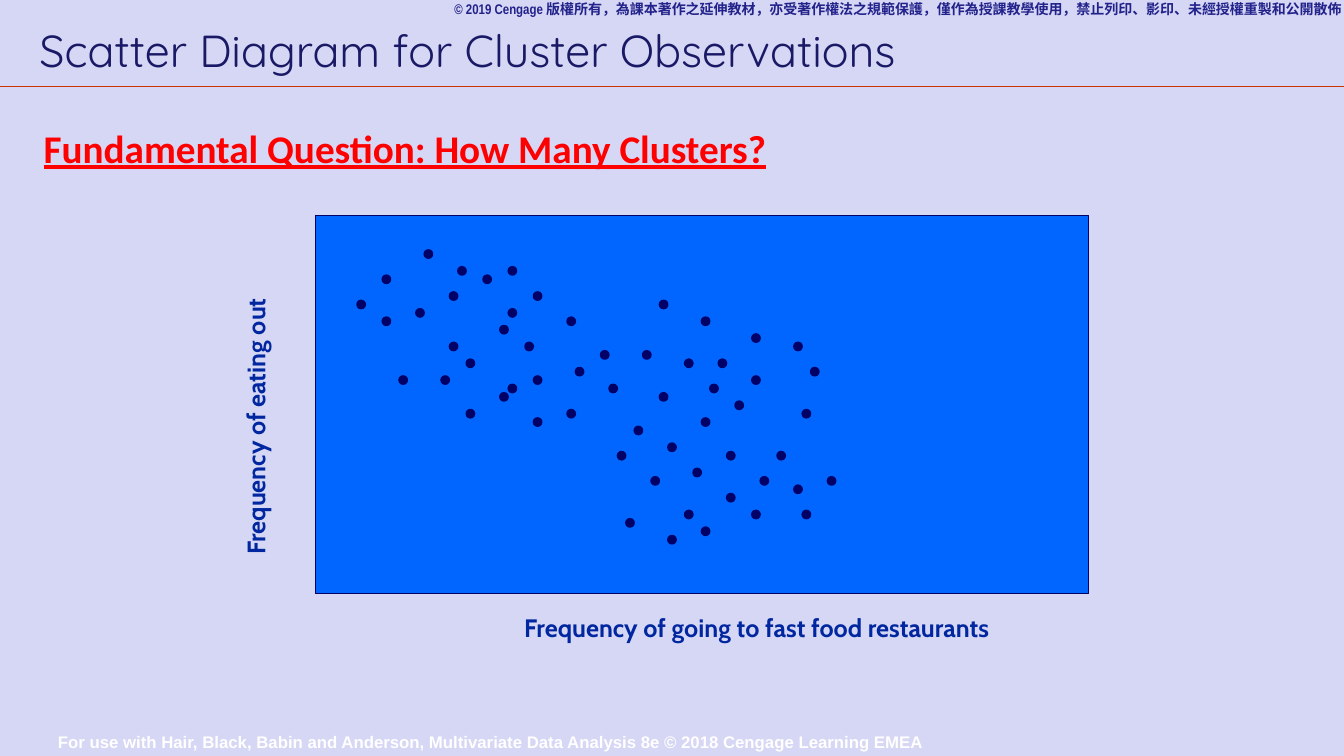
import pptx
import pptx.util
import pptx.dml.color
import pptx.enum.shapes
import pptx.enum.text
import lxml.etree

Pt = pptx.util.Pt
Kind = pptx.enum.shapes.MSO_SHAPE
Side = pptx.enum.text.PP_ALIGN
Mid = pptx.enum.text.MSO_ANCHOR.MIDDLE
Top = pptx.enum.text.MSO_ANCHOR.TOP
Fit = pptx.enum.text.MSO_AUTO_SIZE

TITLE = "Scatter Diagram for Cluster Observations"
ASK = "Fundamental Question: How Many Clusters?"
RIGHTS = "© 2019 Cengage版權所有，為課本著作之延伸教材，亦受著作權法之規範保護，僅作為授課教學使用，禁止列印、影印、未經授權重製和公開散佈"
FOOT = "For use with Hair, Black, Babin and Anderson, Multivariate Data Analysis 8e © 2018 Cengage Learning EMEA"
DOWN = "Frequency of eating out"
ACROSS = "Frequency of going to fast food restaurants"

DOTS = [
    (8, 0), (3, 3), (3, 8), (5, 15), (36, 6), (12, 2), (15, 3), (18, 7),
    (32, 32), (10, 15), (30, 16), (34, 12), (33, 21), (35, 27), (39, 31),
    (43, 13), (37, 34), (41, 33), (47, 31), (48, 27), (50, 24), (52, 11),
    (53, 19), (52, 28), (53, 31), (56, 27), (39, 13), (37, 23), (36, 17),
    (44, 29), (42, 16), (41, 20), (44, 24), (45, 18), (47, 15), (54, 14),
    (40, 26), (13, 19), (0, 6), (7, 7), (11, 5), (47, 10), (17, 9),
    (18, 16), (21, 15), (25, 19), (20, 11), (26, 14), (25, 8), (18, 2),
    (11, 11), (13, 13), (21, 20), (17, 17), (41, 8), (29, 12), (21, 5),
    (31, 24),
]
STEP = 6
LEFT, HEAD = 255, 178.5
INK = "000066"

LOOKS = {
    "title": {"size": Pt(32), "name": "Quicksand", "bold": False},
    "ask": {"size": Pt(28), "name": "Calibri", "bold": True, "underline": True},
    "rights": {"size": Pt(10), "name": "Arial Narrow", "bold": True},
    "label": {"size": Pt(18), "name": "Cabin", "bold": True},
    "foot": {"size": Pt(12), "name": "Arial", "bold": True},
}


def tint(code):
    return pptx.dml.color.RGBColor.from_string(code)


def place(shape, box):
    for name, value in zip(("left", "top", "width", "height"), box):
        setattr(shape, name, Pt(value))


def write(shape, text, look, code, align=Side.LEFT, anchor=Top, fit=Fit.NONE):
    frame = shape.text_frame
    frame.text = text
    frame.word_wrap = True
    frame.auto_size = fit
    frame.vertical_anchor = anchor
    para = frame.paragraphs[0]
    para.alignment = align
    para.space_before = Pt(0)
    font = para.runs[0].font
    for name, value in LOOKS[look].items():
        setattr(font, name, value)
    font.color.rgb = tint(code)
    return para


def label(box, *rest, **more):
    shape = slide.shapes.add_textbox(*map(Pt, box))
    write(shape, *rest, **more)
    return shape


def draw(kind, box, fill, width):
    shape = slide.shapes.add_shape(kind, *map(Pt, box))
    shape.shadow.inherit = False
    shape.fill.solid()
    shape.fill.fore_color.rgb = tint(fill)
    shape.line.color.rgb = tint(INK)
    shape.line.width = Pt(width)


deck = pptx.Presentation()
deck.slide_width, deck.slide_height = Pt(960), Pt(540)
slide = deck.slides.add_slide(deck.slide_layouts[1])
slide.background.fill.solid()
slide.background.fill.fore_color.rgb = tint("D6D6F5")

title, body = slide.placeholders
place(title, (21, 10, 900.5, 50.5))
write(title, TITLE, "title", "191966", anchor=Mid)
place(body, (24, 85, 895, 48))
para = write(body, ASK, "ask", "FF0000")
props = para._p.get_or_add_pPr()
props.set("marL", str(Pt(18)))
props.set("indent", str(Pt(-18)))
lxml.etree.SubElement(props, pptx.oxml.ns.qn("a:buNone"))

rule = slide.shapes.add_connector(
    pptx.enum.shapes.MSO_CONNECTOR.STRAIGHT, Pt(0), Pt(61.75), Pt(960), Pt(61.75))
rule.line.color.rgb = tint("CC3300")
rule.line.width = Pt(0.75)
lxml.etree.SubElement(rule._element.spPr, pptx.oxml.ns.qn("a:effectLst"))

label((317.5, -3, 720.5, 19.5), RIGHTS, "rights", "22228B")
draw(Kind.RECTANGLE, (225.5, 154.25, 552, 270), "0066FF", 0.75)

side = label((168, 139.5, 36, 264), DOWN, "label", "00279F",
             align=Side.CENTER, fit=Fit.SHAPE_TO_FIT_TEXT)
side.rotation = 180
side.text_frame._txBody.bodyPr.set("vert", "eaVert")
label((318, 434, 445, 29), ACROSS, "label", "00279F",
      align=Side.CENTER, fit=Fit.SHAPE_TO_FIT_TEXT)

for col, row in DOTS:
    draw(Kind.FLOWCHART_CONNECTOR,
         (LEFT + col * STEP, HEAD + row * STEP, STEP, STEP), INK, 1)

label((-28, 519, 757.5, 21), FOOT, "foot", "FFFFFF", align=Side.CENTER, anchor=Mid)

deck.save("out.pptx")
